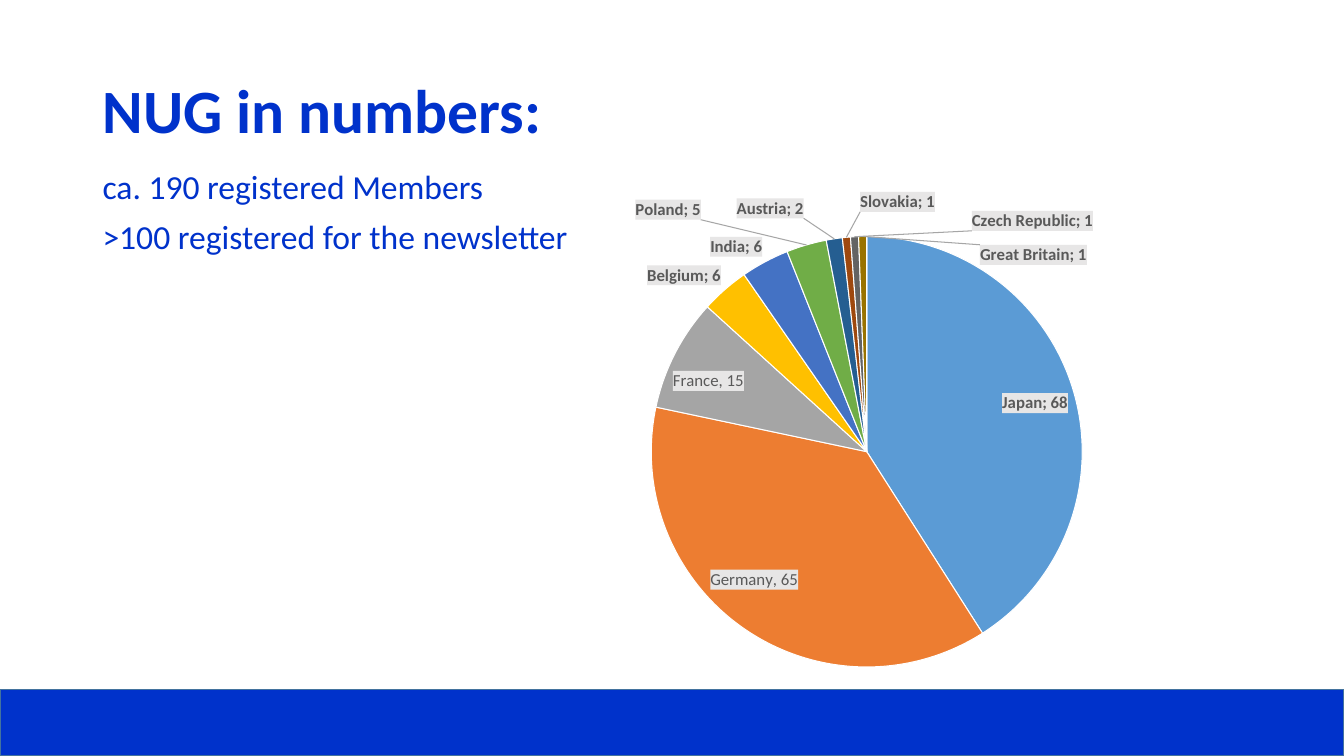
from dataclasses import dataclass

from lxml.etree import SubElement
from pptx import Presentation
from pptx.chart.data import CategoryChartData as ChartData
from pptx.dml.color import RGBColor
from pptx.enum.chart import XL_CHART_TYPE as ChartType
from pptx.enum.shapes import MSO_SHAPE as Shape
from pptx.enum.text import MSO_ANCHOR as Anchor, MSO_AUTO_SIZE as AutoSize, PP_ALIGN as Align
from pptx.oxml import parse_xml
from pptx.oxml.ns import nsdecls, qn
from pptx.util import Cm, Pt

FONT = "Calibri"
BLUE = RGBColor(0x00, 0x32, 0xCB)
EDGE = RGBColor(0x43, 0x73, 0x9E)
WHITE = RGBColor(0xFF, 0xFF, 0xFF)
TEXT = RGBColor(0x59, 0x59, 0x59)
LABEL = RGBColor(0xE7, 0xE6, 0xE6)
LEAD = RGBColor(0xA6, 0xA6, 0xA6)


@dataclass
class Slice:
    name: str
    count: int
    fill: RGBColor
    spot: str = "outEnd"
    shift: tuple[float, float] | None = None
    words: str = ""


SLICES = [
    Slice("Japan", 68, RGBColor(0x5B, 0x9B, 0xD5), "inEnd"),
    Slice("Germany", 62, RGBColor(0xED, 0x7D, 0x31), "inEnd", (-0.05, -0.07), "Germany, 65"),
    Slice("France", 14, RGBColor(0xA5, 0xA5, 0xA5), "inEnd", (-0.01, 0.03), "France, 15"),
    Slice("Belgium", 6, RGBColor(0xFF, 0xC0, 0x00)),
    Slice("India", 6, RGBColor(0x44, 0x72, 0xC4)),
    Slice("Poland", 5, RGBColor(0x70, 0xAD, 0x47), shift=(-0.14, -0.04)),
    Slice("Austria", 2, RGBColor(0x25, 0x5E, 0x91), shift=(-0.04, -0.03)),
    Slice("Slovakia", 1, RGBColor(0x9E, 0x48, 0x0E), shift=(0.12, -0.04)),
    Slice("Czech Republic", 1, RGBColor(0x63, 0x63, 0x63), shift=(0.24, 0)),
    Slice("Great Britain", 1, RGBColor(0x99, 0x73, 0x00), shift=(0.23, 0.07)),
]


def add_run(para, text: str, size: float, bold: bool = False) -> None:
    run = para.add_run()
    run.text = text
    run.font.name = FONT
    run.font.size = Pt(size)
    run.font.bold = bold
    run.font.color.rgb = BLUE


def place(shape, left: float, top: float, width: float, height: float) -> None:
    shape.left, shape.top = Cm(left), Cm(top)
    shape.width, shape.height = Cm(width), Cm(height)


def add_bar(slide) -> None:
    bar = slide.shapes.add_shape(Shape.RECTANGLE, 0, Cm(17.37), Cm(33.87), Cm(1.68))
    bar.shadow.inherit = False
    bar.fill.solid()
    bar.fill.fore_color.rgb = BLUE
    bar.line.color.rgb = EDGE
    bar.line.width = Pt(1)


def fill_title(slide) -> None:
    title = slide.shapes.title
    place(title, 2.33, 1.02, 29.21, 3.68)
    frame = title.text_frame
    frame.auto_size = AutoSize.NONE
    frame.vertical_anchor = Anchor.MIDDLE
    para = frame.paragraphs[0]
    para.alignment = Align.LEFT
    para.line_spacing = 0.9
    add_run(para, "NUG in numbers:", 44, True)


def fill_body(slide) -> None:
    body = slide.placeholders[1]
    place(body, 2.33, 4.17, 29.21, 12.09)
    frame = body.text_frame
    frame.auto_size = AutoSize.NONE
    lines = ["ca. 190 registered Members", ">100 registered for the newsletter"]
    for row, line in enumerate(lines):
        para = frame.paragraphs[0] if row == 0 else frame.add_paragraph()
        props = para._p.get_or_add_pPr()
        props.set("marL", "0")
        props.set("indent", "0")
        SubElement(props, qn("a:buNone"))
        para.line_spacing = 0.9
        para.space_before = Pt(10 if row else 0)
        add_run(para, line, 24)


def font_xml(tag: str, bold: bool) -> str:
    return (f'<a:{tag} sz="1200" b="{int(bold)}"><a:solidFill><a:srgbClr val="{TEXT}"/>'
            f'</a:solidFill><a:latin typeface="{FONT}"/></a:{tag}>')


def style_xml(spot: str, bold: bool = True) -> str:
    """Return the fill, font, place and content flags of a label."""
    flags = {"LegendKey": 0, "Val": 1, "CatName": 1, "SerName": 0, "Percent": 0, "BubbleSize": 0}
    shows = "".join(f'<c:show{flag} val="{on}"/>' for flag, on in flags.items())
    return (f'<c:spPr><a:solidFill><a:srgbClr val="{LABEL}"/></a:solidFill></c:spPr>'
            f'<c:txPr><a:bodyPr/><a:p><a:pPr>{font_xml("defRPr", bold)}</a:pPr></a:p></c:txPr>'
            f'<c:dLblPos val="{spot}"/>{shows}<c:separator>; </c:separator>')


def label_xml(index: int, part: Slice) -> str:
    shift = words = ""
    if part.shift:
        x, y = part.shift
        shift = (f'<c:layout><c:manualLayout><c:x val="{x}"/><c:y val="{y}"/>'
                 '</c:manualLayout></c:layout>')
    if part.words:
        words = (f'<c:tx><c:rich><a:bodyPr/><a:p><a:r>{font_xml("rPr", False)}'
                 f'<a:t>{part.words}</a:t></a:r></a:p></c:rich></c:tx>')
    style = style_xml(part.spot, not part.words)
    return f'<c:dLbl><c:idx val="{index}"/>{shift}{words}{style}</c:dLbl>'


def add_labels(series) -> None:
    parts = "".join(label_xml(index, part) for index, part in enumerate(SLICES))
    labels = parse_xml(
        f'<c:dLbls {nsdecls("c", "a")}>{parts}{style_xml("bestFit")}'
        '<c:showLeaderLines val="1"/><c:leaderLines><c:spPr><a:ln w="9525"><a:solidFill>'
        f'<a:srgbClr val="{LEAD}"/></a:solidFill></a:ln></c:spPr></c:leaderLines></c:dLbls>')
    series._element.find(qn("c:cat")).addprevious(labels)


def set_plot(chart) -> None:
    """Fix the inner plot area as shares of the chart."""
    area = chart._chartSpace.find(".//" + qn("c:plotArea"))
    for old in area.findall(qn("c:layout")):
        area.remove(old)
    sizes = {"x": 0.136, "y": 0.122, "w": 0.691, "h": 0.878}
    items = "".join(f'<c:{key} val="{size}"/>' for key, size in sizes.items())
    area.insert(0, parse_xml(
        f'<c:layout {nsdecls("c")}><c:manualLayout><c:layoutTarget val="inner"/>'
        f'<c:xMode val="edge"/><c:yMode val="edge"/>{items}</c:manualLayout></c:layout>'))


def add_pie(slide) -> None:
    data = ChartData()
    data.categories = [part.name for part in SLICES]
    data.add_series("Series 1", [part.count for part in SLICES])
    chart = slide.shapes.add_chart(
        ChartType.PIE, Cm(12.83), Cm(4.45), Cm(18.72), Cm(12.37), data).chart
    chart.has_title = False
    chart.has_legend = False
    chart.font.name = FONT
    chart.font.size = Pt(10)
    plot = chart.plots[0]
    plot.vary_by_categories = True
    series = plot.series[0]
    for index, part in enumerate(SLICES):
        look = series.points[index].format
        look.fill.solid()
        look.fill.fore_color.rgb = part.fill
        look.line.color.rgb = WHITE
        look.line.width = Pt(0.75)
    add_labels(series)
    set_plot(chart)


def main() -> None:
    deck = Presentation()
    deck.slide_width, deck.slide_height = Cm(33.87), Cm(19.05)
    slide = deck.slides.add_slide(deck.slide_layouts[1])
    add_bar(slide)
    fill_title(slide)
    fill_body(slide)
    add_pie(slide)
    deck.save("out.pptx")


if __name__ == "__main__":
    main()
